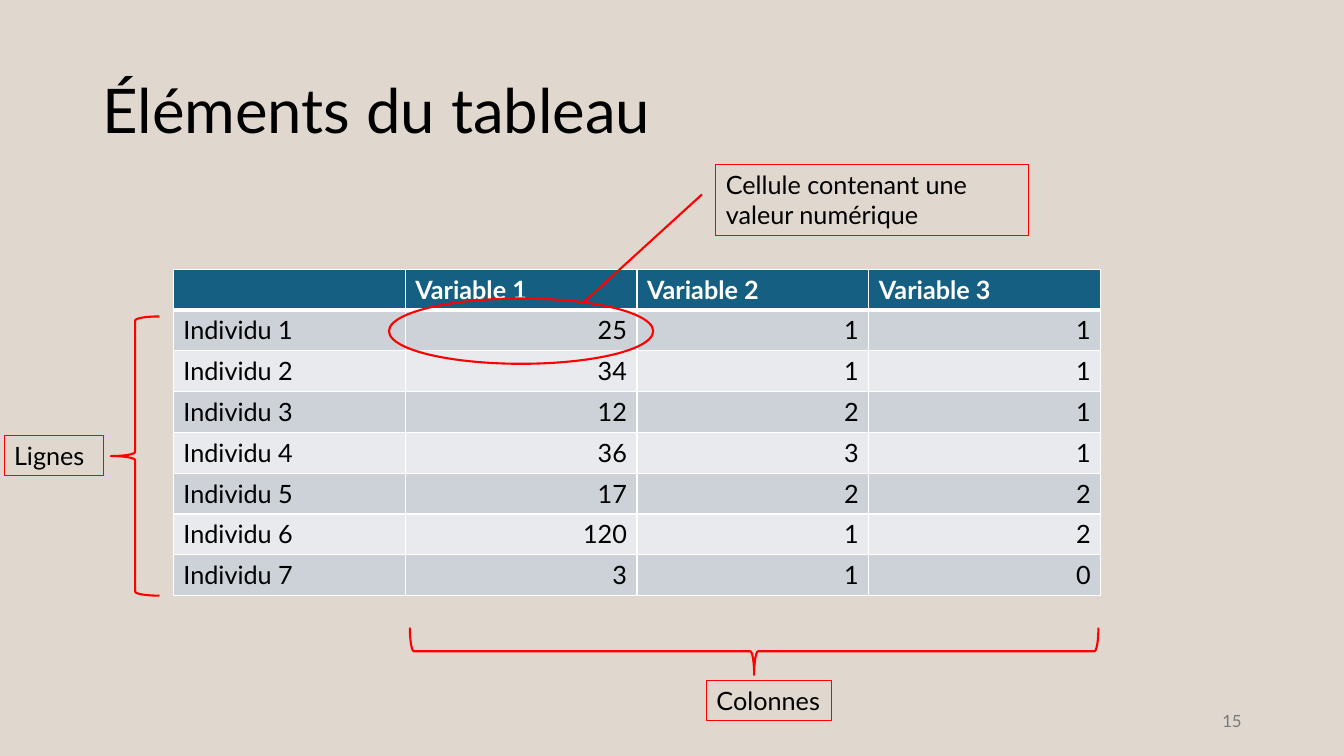
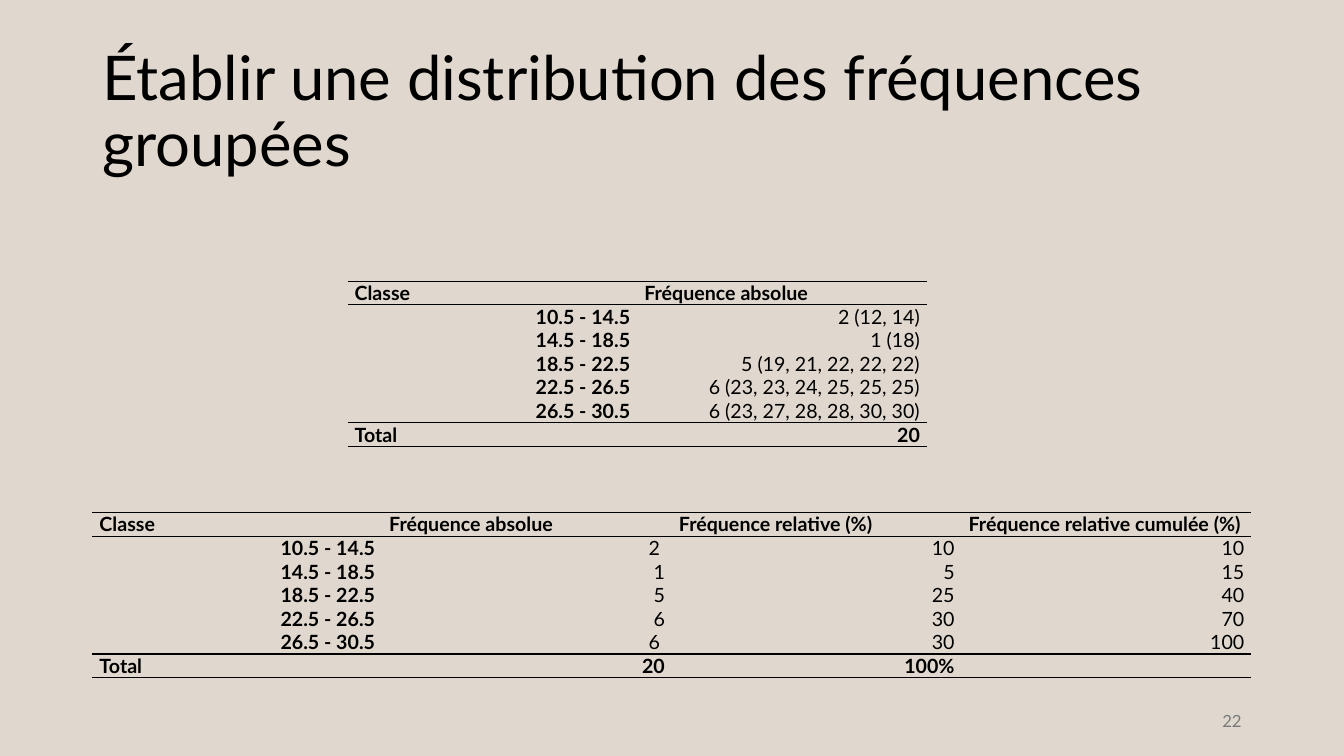
from dataclasses import dataclass

from lxml.etree import SubElement
from pptx import Presentation
from pptx.dml.color import RGBColor
from pptx.enum.shapes import MSO_CONNECTOR as Link, MSO_SHAPE as Form
from pptx.enum.text import MSO_ANCHOR as Anchor, PP_ALIGN as Align
from pptx.oxml import parse_xml
from pptx.oxml.ns import nsdecls, qn
from pptx.util import Inches, Pt

SAND = RGBColor(0xE0, 0xD8, 0xCE)
BLACK = RGBColor(0, 0, 0)
WHITE = RGBColor(0xFF, 0xFF, 0xFF)
GRAY = RGBColor(0x79, 0x79, 0x79)
RED = RGBColor(0xFF, 0, 0)
TEAL = RGBColor(0x15, 0x60, 0x82)
BANDS = RGBColor(0xE8, 0xEA, 0xED), RGBColor(0xCC, 0xD2, 0xD8)
FONT = "Lato"
WIDE, HIGH = Inches(13.33), Inches(7.5)


@dataclass
class Grid:
    """An origin with the width of a column and the height of a row."""
    left: float
    top: float
    col: float
    row: float

    def spot(self, x, y):
        return round(self.left + x * self.col), round(self.top + y * self.row)

    def box(self, x, y, w, h):
        return *self.spot(x, y), round(w * self.col), round(h * self.row)

    def sub(self, x, y, col, row):
        return Grid(*self.box(x, y, col, row))


PAGE = Grid(0, 0, WIDE / 100, HIGH / 100)


def put(item, form):
    for name, value in form.items():
        setattr(item, name, value)


def write(frame, text, size, color=BLACK, bold=False, align=Align.LEFT,
          form=None, space=None):
    put(frame, {"word_wrap": True, **(form or {})})
    para = frame.paragraphs[0]
    put(para, {"alignment": align, **(space or {})})
    if text:
        run = para.add_run()
        run.text = text
        put(run.font, {"name": FONT, "size": Pt(size), "bold": bold})
        run.font.color.rgb = color
    else:
        SubElement(para._p, qn("a:endParaRPr"), sz=str(size * 100))


def base(deck, title, number):
    slide = deck.slides.add_slide(deck.slide_layouts[6])
    fill = slide.background.fill
    fill.solid()
    fill.fore_color.rgb = SAND
    middle = {"vertical_anchor": Anchor.MIDDLE}
    head = slide.shapes.add_textbox(*PAGE.box(6.88, 5.33, 86.25, 19.33))
    write(head.text_frame, title, 44, form=middle, space={"line_spacing": 0.9})
    foot = slide.shapes.add_textbox(*PAGE.box(70.63, 92.67, 22.5, 5.33))
    write(foot.text_frame, number, 12, GRAY, align=Align.RIGHT, form=middle)
    return slide


def edge(cell, sides):
    """Sets the four borders; a side that is not named gets none."""
    props = cell._tc.get_or_add_tcPr()
    for place, side in enumerate("LRTB"):
        color, width = sides.get(side, (None, 0))
        paint = (f'<a:solidFill><a:srgbClr val="{color}"/></a:solidFill>'
                 if width else "<a:noFill/>")
        props.insert(place, parse_xml(
            f'<a:ln{side} {nsdecls("a")} w="{Pt(width)}">{paint}</a:ln{side}>'))


def grid_table(slide, grid, rows, style):
    """Adds a table of one grid cell per entry; style dresses each cell."""
    tall, wide = len(rows), len(rows[0])
    table = slide.shapes.add_table(
        tall, wide, *grid.box(0, 0, wide, tall)).table
    for col in table.columns:
        col.width = round(grid.col)
    for r, row in enumerate(rows):
        table.rows[r].height = round(grid.row)
        for c, text in enumerate(row):
            style(table.cell(r, c), text, r, c, tall)


def band_cell(cell, text, r, c, tall):
    head = r == 0
    cell.fill.solid()
    cell.fill.fore_color.rgb = BANDS[r % 2] if r else TEAL
    sides = dict.fromkeys("LRTB", (WHITE, 1))
    if head:
        sides["B"] = WHITE, 3
    elif r == 1:
        sides["T"] = WHITE, 3
    edge(cell, sides)
    write(cell.text_frame, text, 18, WHITE if head else BLACK, head,
          Align.RIGHT if r and c else Align.LEFT)


def rule_cell(cell, text, r, c, tall):
    head, last = r == 0, r == tall - 1
    cell.fill.background()
    put(cell, {"margin_left": Inches(0.07), "margin_right": Inches(0.07),
               "margin_top": 0, "margin_bottom": 0})
    rule = BLACK, 1
    sides = {"T": rule, "B": rule} if head or last else {}
    if r == 1:
        sides["T"] = rule
    if r == tall - 2:
        sides["B"] = rule
    edge(cell, sides)
    left = head or (last and c == 0)
    write(cell.text_frame, text, 14, bold=head or last or c == 0,
          align=Align.LEFT if left else Align.RIGHT,
          space={"space_before": Pt(12)})


def outline(slide, form, box, width=1.5):
    shape = slide.shapes.add_shape(form, *box)
    shape.shadow.inherit = False
    shape.fill.background()
    shape.line.color.rgb = RED
    shape.line.width = Pt(width)
    return shape


def label(slide, box, text):
    shape = outline(slide, Form.RECTANGLE, box, 0.75)
    write(shape.text_frame, text, 18, form={"vertical_anchor": Anchor.TOP})


def stroke(slide, start, end):
    line = slide.shapes.add_connector(Link.STRAIGHT, *start, *end)
    line.line.color.rgb = RED
    line.line.width = Pt(1.5)
    SubElement(line._element.spPr, qn("a:effectLst"))


def callouts(slide, grid):
    """Marks a cell, the rows and the columns of the table on the grid."""
    outline(slide, Form.OVAL, grid.box(0.93, 0.72, 1.14, 1.6))
    stroke(slide, grid.spot(1.77, 0.81), grid.spot(2.28, -1.83))
    label(slide, grid.box(2.34, -2.57, 1.35, 1.75),
          "Cellule contenant une valeur numérique")

    outline(slide, Form.LEFT_BRACE, grid.box(-0.27, 1.16, 0.21, 6.84))
    label(slide, grid.box(-0.73, 4.07, 0.43, 0.99), "Lignes")

    x, y, w, h = grid.box(1.02, 8.78, 2.97, 1.16)
    turned = x + (w - h) // 2, y + (h - w) // 2, h, w
    outline(slide, Form.RIGHT_BRACE, turned).rotation = 90
    label(slide, grid.box(2.3, 10.07, 0.54, 0.99), "Colonnes")


def parts_slide(deck):
    slide = base(deck, "Éléments du tableau", "15")
    values = ["25 1 1", "34 1 1", "12 2 1", "36 3 1", "17 2 2", "120 1 2",
              "3 1 0"]
    rows = [["", *(f"Variable {n}" for n in (1, 2, 3))]]
    rows += [[f"Individu {n}", *line.split()]
             for n, line in enumerate(values, 1)]
    grid = PAGE.sub(12.9, 35.6, 17.25, 5.4)
    grid_table(slide, grid, rows, band_cell)
    callouts(slide, grid)


def classes_slide(deck):
    slide = base(
        deck, "Établir une distribution des fréquences groupées", "22")
    names = [f"{low} - {low + 4}" for low in (10.5, 14.5, 18.5, 22.5, 26.5)]
    stubs = ["Classe", *names, "Total"]
    counts = ["Fréquence absolue", "2 (12, 14)", "1 (18)",
              "5 (19, 21, 22, 22, 22)", "6 (23, 23, 24, 25, 25, 25)",
              "6 (23, 27, 28, 28, 30, 30)", "20"]
    shares = [
        ["Fréquence absolue", "2 ", "1", "5", "6", "6 ", "20"],
        ["Fréquence relative (%)", "10", "5", "25", "30", "30", "100%"],
        ["Fréquence relative cumulée (%)", "10", "15", "40", "70", "100", ""],
    ]
    for x, y, cols in ((25.86, 37.2, [counts]), (6.88, 67.8, shares)):
        grid = PAGE.sub(x, y, 21.56, 3.12)
        grid_table(slide, grid, list(zip(stubs, *cols)), rule_cell)


def main():
    deck = Presentation()
    put(deck, {"slide_width": WIDE, "slide_height": HIGH})
    parts_slide(deck)
    classes_slide(deck)
    deck.save("out.pptx")


if __name__ == "__main__":
    main()
